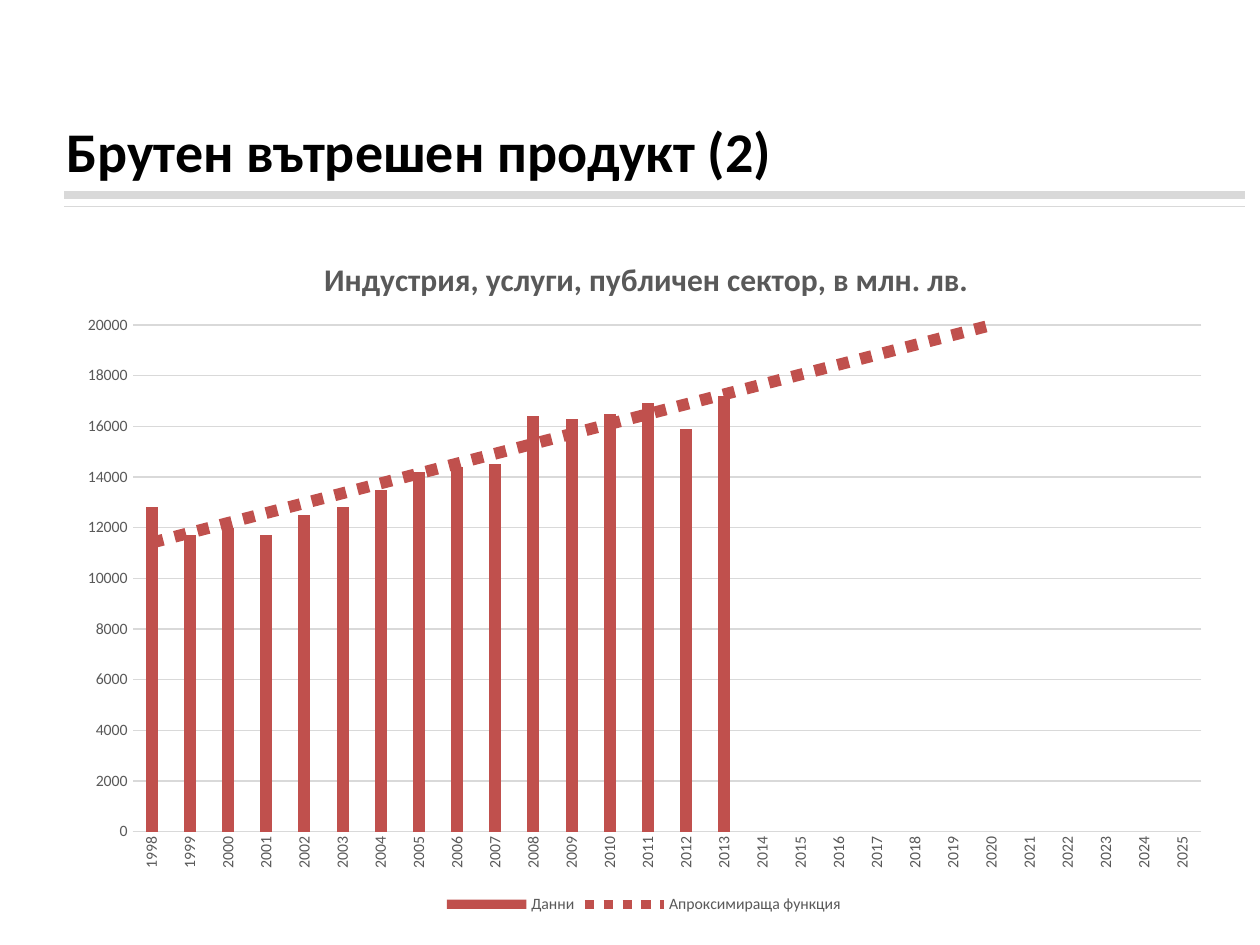
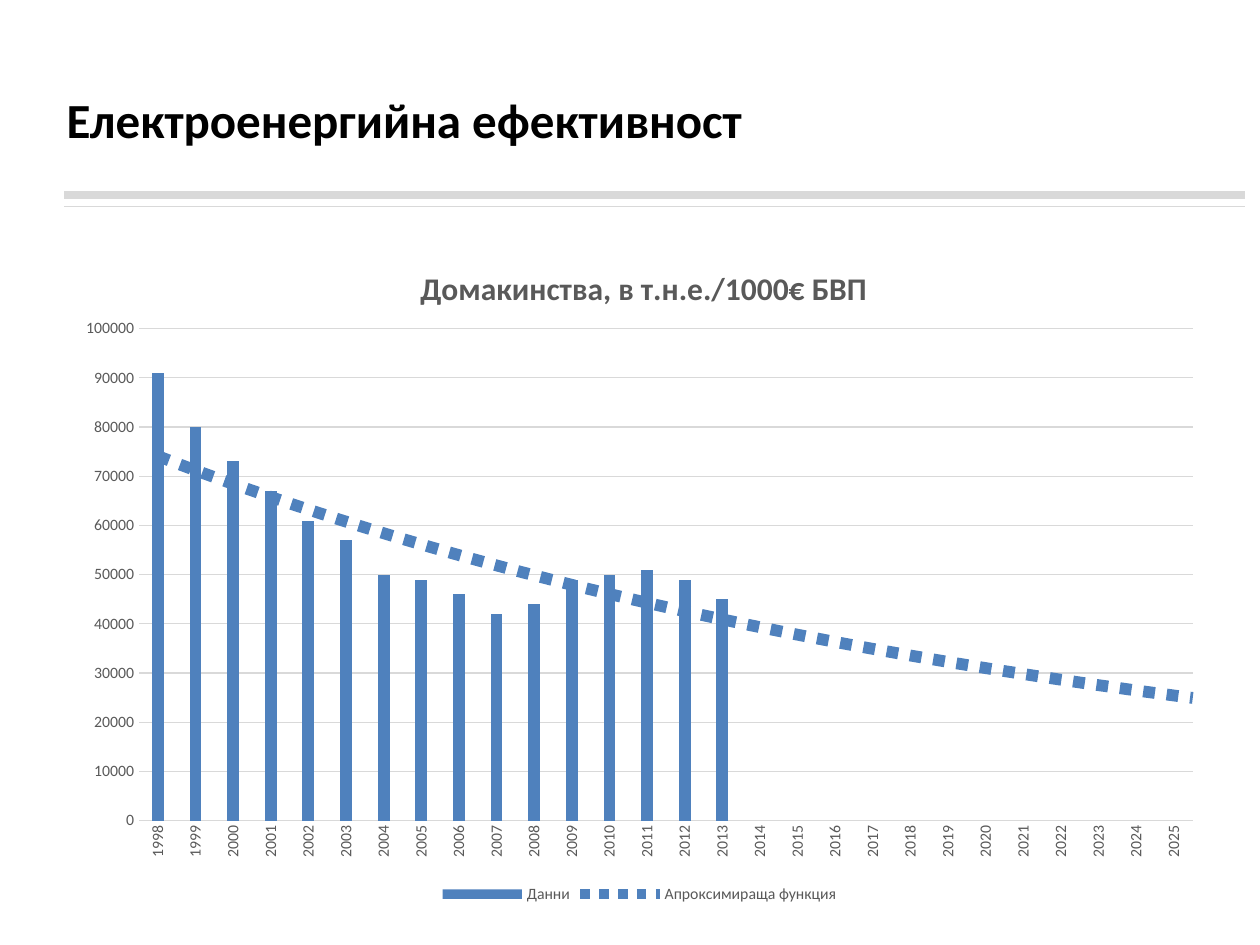
from lxml import etree
from pptx import Presentation
from pptx.chart.data import CategoryChartData
from pptx.dml.color import RGBColor
from pptx.enum.chart import XL_CHART_TYPE, XL_LEGEND_POSITION, XL_TICK_MARK
from pptx.enum.shapes import MSO_CONNECTOR
from pptx.enum.text import MSO_ANCHOR
from pptx.oxml import parse_xml
from pptx.oxml.ns import nsdecls, qn
from pptx.util import Inches, Pt

COLUMNS = XL_CHART_TYPE.COLUMN_CLUSTERED
BOTTOM = XL_LEGEND_POSITION.BOTTOM
NO_TICK = XL_TICK_MARK.NONE
STRAIGHT = MSO_CONNECTOR.STRAIGHT
MIDDLE = MSO_ANCHOR.MIDDLE

FONT = "Calibri"
COLORS = {"ink": "000000", "label": "595959", "rule": "D9D9D9",
          "red": "C0504D", "blue": "4F81BD"}
YEARS = [str(year) for year in range(1998, 2026)]
FORECAST = 12.5  # trend runs on to the right edge of the plot

# Boxes are left, top, width, height in percent of the slide;
# plot boxes are shares of the chart
SLIDES = [
    {"title": "Брутен вътрешен продукт (2)", "title_size": 32,
     "title_box": (4.3, 9.07, 67.8, 13.73),
     "chart_title": "Индустрия, услуги, публичен сектор, в млн. лв.",
     "chart_box": (5, 23.73, 92.2, 73.47),
     "heading_at": (0.22, 0.04), "plot": (0.06, 0.145, 0.92, 0.73),
     "color": "red", "trend": "linear", "top": 20000, "step": 2000,
     "values": [12800, 11700, 12000, 11700, 12500, 12800, 13500, 14200,
                14400, 14500, 16400, 16300, 16500, 16900, 15900, 17200]},
    {"title": "Електроенергийна ефективност", "title_size": 28,
     "title_box": (4.3, 4.8, 72.4, 15.47),
     "chart_title": "Домакинства, в т.н.е./1000€ БВП",
     "chart_box": (5, 24.8, 91.5, 71.33),
     "heading_at": (0.305, 0.04), "plot": (0.066, 0.14, 0.914, 0.73),
     "color": "blue", "trend": "exp", "top": 100000, "step": 10000,
     "values": [91000, 80000, 73000, 67000, 61000, 57000, 50000, 49000,
                46000, 42000, 44000, 49000, 50000, 51000, 49000, 45000]},
]


def rgb(name):
    return RGBColor.from_string(COLORS[name])


def style_font(font, size, color, bold=False):
    font.name, font.size, font.bold = FONT, Pt(size), bold
    font.color.rgb = rgb(color)


def set_layout(parent, index, shares, inner=False):
    """Fix the place of a chart part, in shares of the chart."""
    for old in parent.findall(qn("c:layout")):
        parent.remove(old)
    target = '<c:layoutTarget val="inner"/>' if inner else ""
    modes = "".join(f'<c:{axis}Mode val="edge"/>' for axis in "xy")
    places = "".join(f'<c:{side} val="{share}"/>'
                     for side, share in zip("xywh", shares))
    parent.insert(index, parse_xml(
        f'<c:layout {nsdecls("c")}><c:manualLayout>{target}{modes}{places}'
        '</c:manualLayout></c:layout>'))


class Deck:
    def __init__(self):
        self.file = Presentation()
        self.file.slide_width, self.file.slide_height = Inches(10), Inches(7.5)
        self.slide = None

    def box(self, left, top, width, height):
        across, down = self.file.slide_width / 100, self.file.slide_height / 100
        return (round(left * across), round(top * down),
                round(width * across), round(height * down))

    def new_slide(self):
        self.slide = self.file.slides.add_slide(self.file.slide_layouts[6])
        self.rule(20.67, 4.5)
        self.rule(21.87, 0.25)

    def rule(self, top, weight):
        left, y, right, _ = self.box(5.1, top, 98.8, 0)
        line = self.slide.shapes.add_connector(STRAIGHT, left, y, right, y)
        line.line.color.rgb = rgb("rule")
        line.line.width = Pt(weight)
        etree.SubElement(line._element.spPr, qn("a:effectLst"))

    def title(self, text, size, box):
        frame = self.slide.shapes.add_textbox(*self.box(*box)).text_frame
        frame.word_wrap = True
        frame.vertical_anchor = MIDDLE
        frame.text = text
        style_font(frame.paragraphs[0].font, size, "ink", bold=True)

    def trend_chart(self, content):
        data = CategoryChartData()
        data.categories = YEARS
        known = content["values"]
        data.add_series("Данни", known + [None] * (len(YEARS) - len(known)))
        chart = self.slide.shapes.add_chart(
            COLUMNS, *self.box(*content["chart_box"]), data).chart
        style_font(chart.font, 10, "ink")

        # Heading and legend
        heading = chart.chart_title
        heading.text_frame.text = content["chart_title"]
        style_font(heading.text_frame.paragraphs[0].font, 18, "label", bold=True)
        heading.include_in_layout = False
        set_layout(heading._element, 1, content["heading_at"])
        chart.has_legend = True
        chart.legend.position = BOTTOM
        chart.legend.include_in_layout = False
        style_font(chart.legend.font, 9, "label")

        # Axes
        years, amounts = chart.category_axis, chart.value_axis
        for axis in (years, amounts):
            axis.major_tick_mark = axis.minor_tick_mark = NO_TICK
            style_font(axis.tick_labels.font, 9, "label")
        years._element.find(qn("c:txPr")).find(qn("a:bodyPr")).set("rot", "-5400000")
        amounts.minimum_scale, amounts.maximum_scale = 0, content["top"]
        amounts.major_unit = content["step"]
        amounts.format.line.fill.background()
        for line in (years.format.line, amounts.major_gridlines.format.line):
            line.color.rgb = rgb("rule")
            line.width = Pt(0.75)

        # Columns
        plot = chart.plots[0]
        plot.vary_by_categories = False
        plot.gap_width, plot.overlap = 219, -27
        columns = plot.series[0]
        columns.invert_if_negative = False
        columns.format.fill.solid()
        columns.format.fill.fore_color.rgb = rgb(content["color"])
        self.trend_line(columns, content["trend"], content["color"])
        set_layout(chart._chartSpace.chart.plotArea, 0, content["plot"], inner=True)

    def trend_line(self, series, kind, color):
        series._element.find(qn("c:cat")).addprevious(parse_xml(
            f'<c:trendline {nsdecls("c", "a")}>'
            '<c:name>Апроксимираща функция</c:name>'
            f'<c:spPr><a:ln w="{Pt(6.75)}"><a:solidFill>'
            f'<a:srgbClr val="{COLORS[color]}"/></a:solidFill>'
            '<a:prstDash val="sysDot"/></a:ln></c:spPr>'
            f'<c:trendlineType val="{kind}"/><c:forward val="{FORECAST}"/>'
            '<c:dispRSqr val="0"/><c:dispEq val="0"/></c:trendline>'))


def main():
    deck = Deck()
    for content in SLIDES:
        deck.new_slide()
        deck.title(content["title"], content["title_size"], content["title_box"])
        deck.trend_chart(content)
    deck.file.save("out.pptx")


if __name__ == "__main__":
    main()
